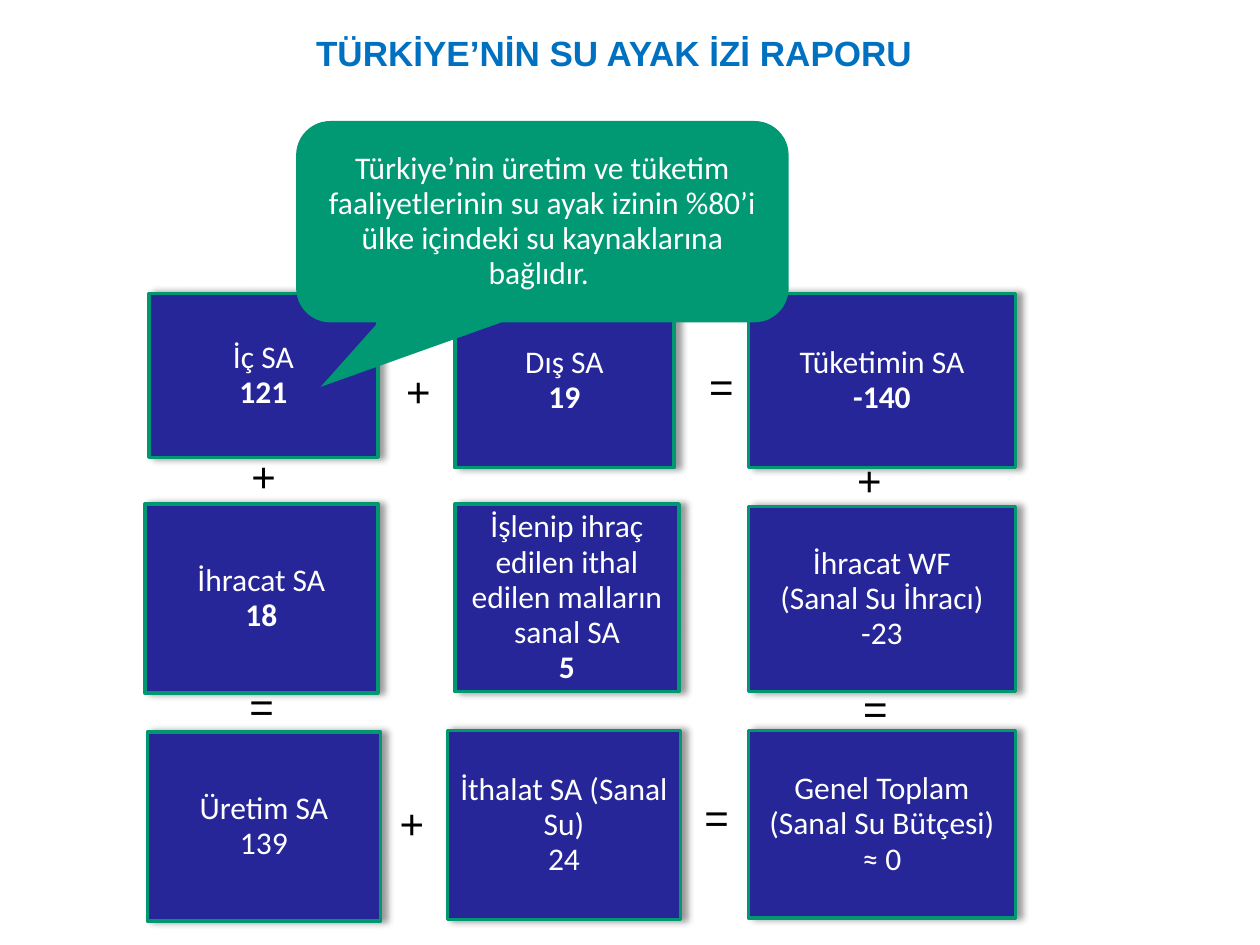
from lxml import etree
from pptx import Presentation
from pptx import util as u
from pptx.dml.color import RGBColor
from pptx.enum import shapes, text
from pptx.oxml.ns import qn

COLORS = {"box": "262699", "border": "009771", "callout": "009973",
          "title": "0070C0", "light": "FFFFFF", "dark": "000000"}


def write(tf, lines, size, font, color, spacing=0.93):
    tf.word_wrap = True
    for i, (line, bold) in enumerate(lines):
        p = tf.paragraphs[0] if i == 0 else tf.add_paragraph()
        p.alignment = text.PP_ALIGN.CENTER
        p.line_spacing = spacing
        r = p.add_run()
        r.text = line
        r.font.size = u.Pt(size)
        r.font.name = font
        r.font.bold = bold
        r.font.color.rgb = RGBColor.from_string(COLORS[color])


def add_block(kind, place, fill, lines):
    sp = s.shapes.add_shape(kind, *[u.Cm(v) for v in place])
    sp.shadow.inherit = False
    sp.fill.solid()
    sp.fill.fore_color.rgb = RGBColor.from_string(COLORS[fill])
    sp.line.fill.background()
    sp.text_frame.vertical_anchor = text.MSO_ANCHOR.MIDDLE
    write(sp.text_frame, lines, 18, "Calibri", "light")
    return sp


prs = Presentation()
prs.slide_width, prs.slide_height = u.Cm(25.4), u.Cm(19.05)
s = prs.slides.add_slide(prs.slide_layouts[5])

title = s.shapes.title
title.left, title.top = u.Cm(3.71), u.Cm(0.51)
title.width, title.height = u.Cm(17.73), u.Cm(1.35)
tf = title.text_frame
tf.auto_size = text.MSO_AUTO_SIZE.NONE
tf.vertical_anchor = text.MSO_ANCHOR.TOP
tf.margin_right = u.Cm(0.64)
write(tf, [("TÜRKİYE’NİN SU AYAK İZİ RAPORU", True)], 20, "Arial", "title", 1.0)

boxes = [
    ((3, 5.92, 4.62, 3.3), [("İç SA", False), ("121", True)]),
    ((9.17, 5.92, 4.42, 3.51), [("Dış SA", False), ("19", True)]),
    ((15.09, 5.92, 5.38, 3.51), [("Tüketimin SA", False), ("-140", True)]),
    ((2.92, 10.16, 4.7, 3.81), [("İhracat SA", False), ("18", True)]),
    ((9.17, 10.16, 4.52, 3.78),
     [("İşlenip ihraç edilen ithal edilen malların sanal SA", False), ("5", True)]),
    ((15.09, 10.21, 5.38, 3.73),
     [("İhracat WF", False), ("(Sanal Su İhracı)", False), ("-23", False)]),
    ((2.97, 14.76, 4.7, 3.81), [("Üretim SA", False), ("139", False)]),
    ((9.02, 14.73, 4.7, 3.81), [("İthalat SA (Sanal Su)", False), ("24", False)]),
    ((15.09, 14.73, 5.38, 3.78),
     [("Genel Toplam", False), ("(Sanal Su Bütçesi)", False), ("≈ 0", False)]),
]
for place, lines in boxes:
    sp = add_block(shapes.MSO_SHAPE.RECTANGLE, place, "box", lines)
    sp.line.color.rgb = RGBColor.from_string(COLORS["border"])
    sp.line.width = u.Pt(2)
    effects = sp._element.spPr.find(qn("a:effectLst"))
    shadow = etree.SubElement(effects, qn("a:outerShdw"), blurRad=str(u.Pt(4)),
                              dist=str(u.Pt(3)), dir="0", algn="l", rotWithShape="0")
    tint = etree.SubElement(shadow, qn("a:srgbClr"), val=COLORS["dark"])
    etree.SubElement(tint, qn("a:alpha"), val="40000")

widths = {"+": 1.63, "=": 2.11}
operators = [
    ("+", 7.62, 7.34), ("=", 13.49, 7.24),
    ("+", 4.5, 9.04), ("+", 16.71, 9.12),
    ("=", 4.22, 13.69), ("=", 16.59, 13.72),
    ("+", 7.49, 16.05), ("=", 13.39, 15.93),
]
for sign, left, top in operators:
    tb = s.shapes.add_textbox(u.Cm(left), u.Cm(top), u.Cm(widths[sign]), u.Cm(1.3))
    tb.text_frame.auto_size = text.MSO_AUTO_SIZE.SHAPE_TO_FIT_TEXT
    write(tb.text_frame, [(sign, False)], 24, "Arial", "dark")

callout = add_block(
    shapes.MSO_SHAPE.ROUNDED_RECTANGULAR_CALLOUT, (5.97, 2.44, 9.93, 4.06), "callout",
    [("Türkiye’nin üretim ve tüketim faaliyetlerinin su ayak izinin %80’i "
      "ülke içindeki su kaynaklarına bağlıdır. ", False)])
for i, value in enumerate((-0.45, 0.82, 0.17)):
    callout.adjustments[i] = value

prs.save("out.pptx")
